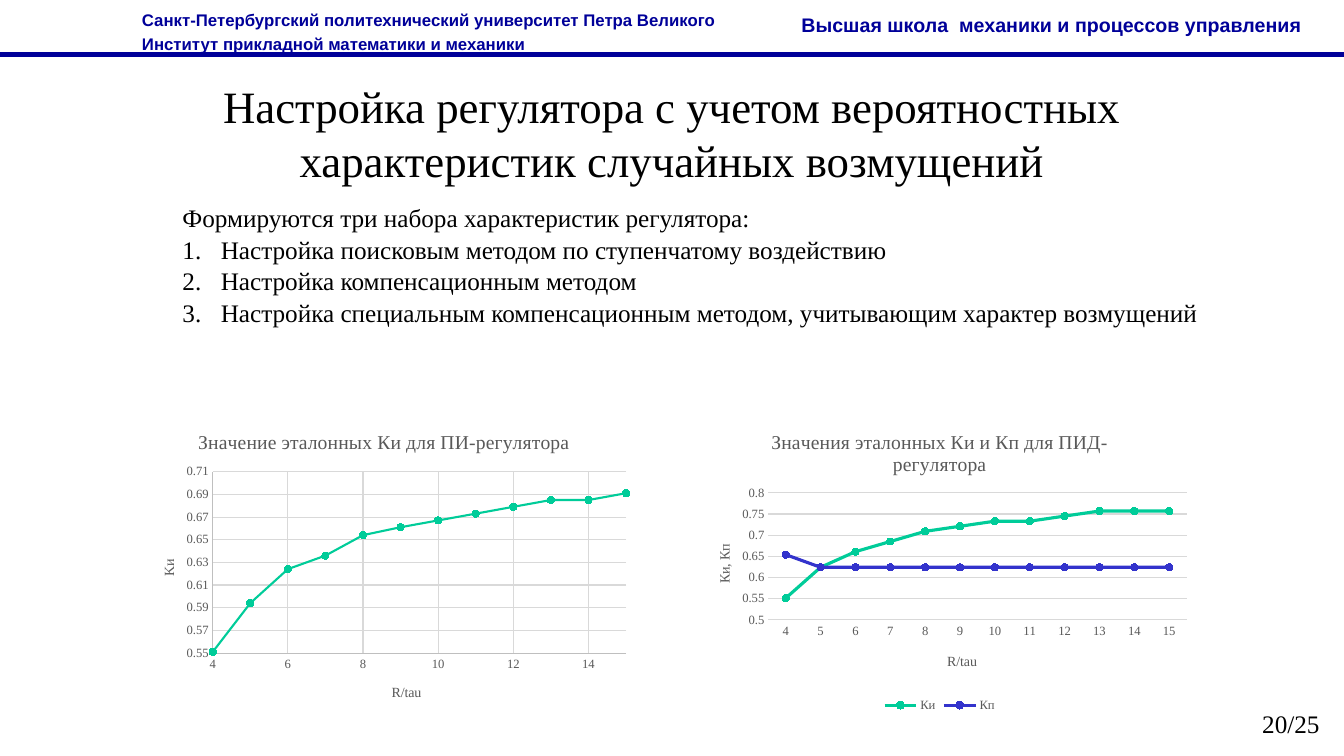
from dataclasses import dataclass

from lxml import etree
from pptx import Presentation
from pptx.chart.data import CategoryChartData, XyChartData
from pptx.dml.color import RGBColor
from pptx.enum.chart import XL_CHART_TYPE, XL_LEGEND_POSITION, XL_MARKER_STYLE, XL_TICK_MARK
from pptx.enum.text import MSO_ANCHOR, MSO_AUTO_SIZE, PP_ALIGN
from pptx.oxml.ns import qn
from pptx.util import Inches, Pt


@dataclass(frozen=True)
class Theme:
    serif: str = "Times New Roman"
    sans: str = "Arial"
    navy: str = "000099"
    black: str = "000000"
    gray: str = "595959"
    axis: str = "BFBFBF"
    grid: str = "D9D9D9"
    green: str = "00CC99"
    blue: str = "3333CC"
    title: int = 32
    body: int = 18
    school: int = 14
    institute: int = 12
    chart_title: int = 14
    axis_title: int = 10
    tick: int = 9


THEME = Theme()
RATIOS = list(range(4, 16))
PI_GAINS = [0.551, 0.594, 0.624, 0.636, 0.654, 0.661,
            0.667, 0.673, 0.679, 0.685, 0.685, 0.691]
PID_INTEGRAL = [0.551, 0.624, 0.661, 0.685, 0.709, 0.721,
                0.733, 0.733, 0.745, 0.757, 0.757, 0.757]
PID_PROPORTIONAL = [0.654] + [0.624] * 11


def style_font(font, size, color, name=THEME.serif, bold=False):
    font.size, font.name, font.bold = Pt(size), name, bold
    font.color.rgb = RGBColor.from_string(color)


def style_line(line, color, width=0.75):
    line.color.rgb = RGBColor.from_string(color)
    line.width = Pt(width)


def move(shape, box):
    shape.left, shape.top, shape.width, shape.height = map(Inches, box)


def add_label(slide, box, text, size, wrap=True, spacing=1.0, **style):
    frame = slide.shapes.add_textbox(*map(Inches, box)).text_frame
    frame.word_wrap = wrap
    frame.text = text
    para = frame.paragraphs[0]
    para.line_spacing = spacing
    for span in para.runs:
        style_font(span.font, size, **style)


# Header band with the institute, the school and a rule
def add_header(slide, box):
    left, top, width, height = box
    rule = slide.shapes.add_connector(
        1, *map(Inches, (left, top + height, left + width, top + height)))
    style_line(rule.line, THEME.navy, 3)
    etree.SubElement(rule._element.spPr, qn("a:effectLst"))
    style = dict(spacing=1.2, color=THEME.navy, name=THEME.sans, bold=True)
    add_label(slide, (left + 1.31, top + 0.01, 6.17, 0.56),
              "Санкт-Петербургский политехнический университет Петра Великого\v"
              "Институт прикладной математики и механики", THEME.institute, **style)
    add_label(slide, (left + 7.85, top + 0.03, 6.14, 0.38),
              "Высшая школа  механики и процессов управления", THEME.school, **style)


# Title
def fill_title(shape, box, text):
    move(shape, box)
    frame = shape.text_frame
    frame.text = text
    frame.word_wrap = True
    frame.auto_size = MSO_AUTO_SIZE.NONE
    frame.vertical_anchor = MSO_ANCHOR.TOP
    para = frame.paragraphs[0]
    para.alignment = PP_ALIGN.CENTER
    style_font(para.runs[0].font, THEME.title, THEME.black)


# Introductory line followed by a numbered list
def fill_list(shape, box, intro, items):
    move(shape, box)
    frame = shape.text_frame
    frame.text = "\n".join([intro, *items])
    frame.word_wrap = True
    frame.auto_size = MSO_AUTO_SIZE.NONE
    indent = Inches(0.38)
    for number, para in enumerate(frame.paragraphs):
        properties = para._p.get_or_add_pPr()
        properties.set("marL", str(indent if number else 0))
        properties.set("indent", str(-indent if number else 0))
        if number:
            etree.SubElement(properties, qn("a:buFont"), typeface="+mj-lt")
            etree.SubElement(properties, qn("a:buAutoNum"), type="arabicPeriod")
        else:
            etree.SubElement(properties, qn("a:buNone"))
        para.space_before = Pt(0)
        para.line_spacing = 1.05
        style_font(para.runs[0].font, THEME.body, THEME.black)


def set_layout(element, index, inner=False, **fractions):
    for old in element.findall(qn("c:layout")):
        element.remove(old)
    layout = etree.Element(qn("c:layout"))
    manual = etree.SubElement(layout, qn("c:manualLayout"))
    if inner:
        etree.SubElement(manual, qn("c:layoutTarget"), val="inner")
    for side in ("x", "y"):
        etree.SubElement(manual, qn(f"c:{side}Mode"), val="edge")
    for side, value in fractions.items():
        etree.SubElement(manual, qn(f"c:{side}"), val=str(value))
    element.insert(index, layout)


def style_axis(axis, title, place, line=None, grid=True):
    axis.axis_title.text_frame.text = title
    span = axis.axis_title.text_frame.paragraphs[0].runs[0]
    style_font(span.font, THEME.axis_title, THEME.gray)
    set_layout(axis.axis_title._element, 1, x=place[0], y=place[1])
    axis.major_tick_mark = axis.minor_tick_mark = XL_TICK_MARK.NONE
    style_font(axis.tick_labels.font, THEME.tick, THEME.gray)
    axis.tick_labels.number_format = "General"
    axis.tick_labels.number_format_is_linked = False
    if line:
        style_line(axis.format.line, line)
    else:
        axis.format.line.fill.background()
    axis.has_major_gridlines = grid
    if grid:
        style_line(axis.major_gridlines.format.line, THEME.grid)


def set_scale(axis, low, high, step):
    axis.minimum_scale, axis.maximum_scale, axis.major_unit = low, high, step


# Chart frame, title, plot area and series
def add_line_chart(slide, box, kind, data, title, plot_box, width, colors):
    chart = slide.shapes.add_chart(kind, *map(Inches, box), data).chart
    style_font(chart.font, THEME.axis_title, THEME.black)
    chart.has_legend = False
    chart.chart_title.text_frame.text = title
    span = chart.chart_title.text_frame.paragraphs[0].runs[0]
    style_font(span.font, THEME.chart_title, THEME.gray)
    set_layout(chart._chartSpace.chart.plotArea, 0, inner=True,
               **dict(zip("xywh", plot_box)))
    chart.plots[0].vary_by_categories = False
    for series, color in zip(chart.plots[0].series, colors):
        series.smooth = False
        style_line(series.format.line, color, width)
        series.marker.style = XL_MARKER_STYLE.CIRCLE
        series.marker.size = 5
        series.marker.format.fill.solid()
        series.marker.format.fill.fore_color.rgb = RGBColor.from_string(color)
        style_line(series.marker.format.line, color)
    return chart


def add_pi_chart(slide, box):
    data = XyChartData()
    series = data.add_series("Ки")
    for ratio, gain in zip(RATIOS, PI_GAINS):
        series.add_data_point(ratio, gain)
    chart = add_line_chart(slide, box, XL_CHART_TYPE.XY_SCATTER_LINES, data,
                           "Значение эталонных Ки для ПИ-регулятора",
                           (0.16, 0.19, 0.82, 0.6), 1.5, [THEME.green])
    style_axis(chart.category_axis, "R/tau", (0.51, 0.88), THEME.axis)
    style_axis(chart.value_axis, "Kи", (0.05, 0.47), THEME.axis)
    set_scale(chart.category_axis, 4, 15, 2)
    set_scale(chart.value_axis, 0.55, 0.71, 0.02)


def add_pid_chart(slide, box):
    data = CategoryChartData()
    data.categories = [str(ratio) for ratio in RATIOS]
    data.add_series("Ки", PID_INTEGRAL)
    data.add_series("Кп", PID_PROPORTIONAL)
    chart = add_line_chart(slide, box, XL_CHART_TYPE.LINE_MARKERS, data,
                           "Значения эталонных Ки и Кп для ПИД-регулятора",
                           (0.16, 0.26, 0.83, 0.42), 2.25, [THEME.green, THEME.blue])
    style_axis(chart.category_axis, "R/tau", (0.51, 0.78), THEME.grid, grid=False)
    style_axis(chart.value_axis, "Ки, Кп", (0.05, 0.42))
    set_scale(chart.value_axis, 0.5, 0.8, 0.05)
    chart.has_legend = True
    chart.legend.position = XL_LEGEND_POSITION.BOTTOM
    chart.legend.include_in_layout = False
    style_font(chart.legend.font, THEME.tick, THEME.gray)


def main():
    deck = Presentation()
    deck.slide_width, deck.slide_height = Inches(13.33), Inches(7.5)
    page = deck.slides.add_slide(deck.slide_layouts[1])
    add_header(page, (0, 0, 13.33, 0.54))
    fill_title(page.shapes.title, (1.96, 0.73, 9.41, 1.18),
               "Настройка регулятора с учетом вероятностных "
               "характеристик случайных возмущений")
    fill_list(page.placeholders[1], (1.71, 1.94, 10.63, 1.31),
              "Формируются три набора характеристик регулятора:",
              ["Настройка поисковым методом по ступенчатому воздействию",
               "Настройка компенсационным методом",
               "Настройка специальным компенсационным методом, учитывающим характер возмущений"])
    add_pi_chart(page, (1.31, 4.11, 5, 3))
    add_pid_chart(page, (6.82, 4.11, 5, 3))
    add_label(page, (12.42, 6.98, 0.78, 0.4), "20/25", THEME.body,
              wrap=False, color=THEME.black)
    deck.save("out.pptx")


if __name__ == "__main__":
    main()
